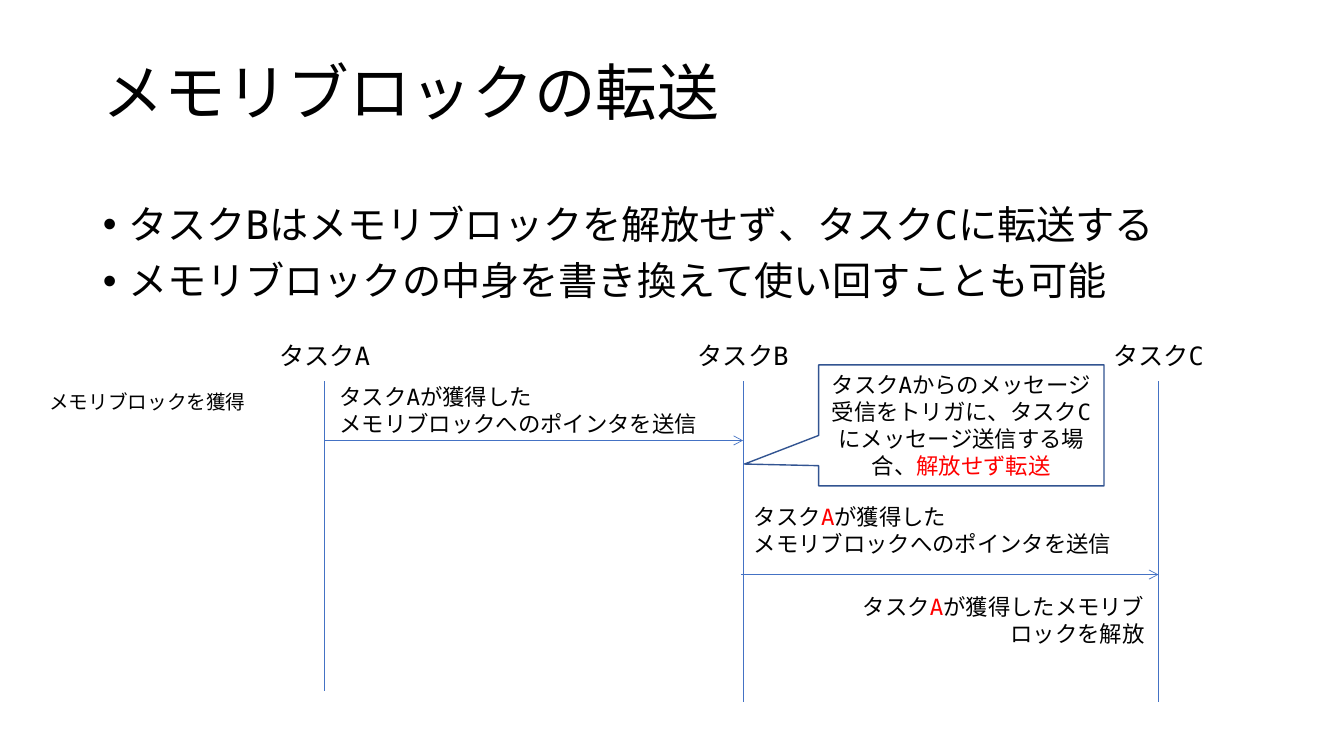
from dataclasses import dataclass

from lxml.etree import SubElement
from pptx import Presentation
from pptx.dml.color import RGBColor as RGB
from pptx.enum.shapes import MSO_CONNECTOR as CONN, MSO_SHAPE as SHAPE
from pptx.enum.text import MSO_ANCHOR as ANCHOR, PP_ALIGN as AL
from pptx.oxml.ns import qn
from pptx.util import Inches, Pt

FONT = "DejaVu Sans Mono"
COLORS = {"text": "000000", "accent": "FF0000", "line": "4472C4", "callout": "325491"}
Run = tuple[str, str]
Box = tuple[float, float, float, float]
LIFELINE_TOP = 3.78


@dataclass
class Task:
    name: str
    x: float
    bottom: float


@dataclass
class Message:
    start: float
    end: float
    y: float


@dataclass
class Label:
    box: Box
    paragraphs: list[list[Run]]
    size: int = 16
    align: AL = AL.LEFT


TITLE = "メモリブロックの転送"
BULLETS = [
    "タスクBはメモリブロックを解放せず、タスクCに転送する",
    "メモリブロックの中身を書き換えて使い回すことも可能",
]
TASKS = [Task("タスクA", 3.22, 6.86), Task("タスクB", 7.37, 6.96), Task("タスクC", 11.49, 6.96)]
MESSAGES = [Message(3.22, 7.37, 4.37), Message(7.35, 11.49, 5.7)]
POINTER = "メモリブロックへのポインタを送信"
LABELS = [
    Label((3.27, 3.75, 3.92, 0.64), [[("タスクAが獲得した", "text")], [(POINTER, "text")]]),
    Label((0.39, 3.82, 2.8, 0.34), [[("メモリブロックを獲得", "text")]], 14),
    Label((7.38, 4.94, 3.83, 0.64),
          [[("タスク", "text"), ("A", "accent"), ("が獲得した", "text")], [(POINTER, "text")]]),
    Label((8.13, 5.84, 3.32, 0.64),
          [[("タスク", "text"), ("A", "accent"), ("が獲得したメモリブロックを解放", "text")]],
          align=AL.RIGHT),
]
CALLOUT = Label(
    (8.12, 3.62, 2.83, 1.2),
    [[("タスクAからのメッセージ受信をトリガに、タスクCにメッセージ送信する場合、", "text"),
      ("解放せず転送", "accent")]],
    align=AL.CENTER,
)


def color(name: str) -> RGB:
    return RGB.from_string(COLORS[name])


def write(tf, paragraphs: list[list[Run]], size: int, align: AL) -> None:
    tf.word_wrap = True
    for i, runs in enumerate(paragraphs):
        p = tf.paragraphs[0] if i == 0 else tf.add_paragraph()
        p.alignment = align
        for text, shade in runs:
            r = p.add_run()
            r.text = text
            r.font.size = Pt(size)
            r.font.color.rgb = color(shade)
            r.font.name = FONT
            SubElement(r.font._element, qn("a:ea")).set("typeface", FONT)


def place(sp, box: Box) -> None:
    sp.left, sp.top, sp.width, sp.height = map(Inches, box)


def add_label(s, label: Label) -> None:
    sp = s.shapes.add_textbox(*map(Inches, label.box))
    write(sp.text_frame, label.paragraphs, label.size, label.align)


def add_line(s, x1: float, y1: float, x2: float, y2: float, arrow: bool = False) -> None:
    sp = s.shapes.add_connector(CONN.STRAIGHT, *map(Inches, (x1, y1, x2, y2)))
    sp.line.color.rgb = color("line")
    sp.line.width = Pt(0.5)
    if arrow:
        SubElement(sp.line._get_or_add_ln(), qn("a:tailEnd")).set("type", "arrow")
    SubElement(sp._element.spPr, qn("a:effectLst"))


def add_task(s, task: Task) -> None:
    add_line(s, task.x, LIFELINE_TOP, task.x, task.bottom)
    add_label(s, Label((task.x - 1.2, 3.33, 2.4, 0.4), [[(task.name, "text")]], 18, AL.CENTER))


def add_callout(s, label: Label) -> None:
    sp = s.shapes.add_shape(SHAPE.RECTANGULAR_CALLOUT, *map(Inches, label.box))
    sp.adjustments[0], sp.adjustments[1] = -0.76, 0.32
    sp.shadow.inherit = False
    sp.fill.background()
    sp.line.color.rgb = color("callout")
    sp.line.width = Pt(1)
    sp.text_frame.vertical_anchor = ANCHOR.MIDDLE
    write(sp.text_frame, label.paragraphs, label.size, label.align)


def fill_placeholders(s) -> None:
    title, body = s.shapes.title, s.placeholders[1]
    place(title, (0.92, 0.4, 11.5, 1.09))
    title.text_frame.vertical_anchor = ANCHOR.MIDDLE
    write(title.text_frame, [[(TITLE, "text")]], 44, AL.LEFT)
    title.text_frame.paragraphs[0].line_spacing = 0.9
    place(body, (0.92, 1.99, 11.5, 4.76))
    write(body.text_frame, [[(text, "text")] for text in BULLETS], 28, AL.LEFT)
    for p in body.text_frame.paragraphs:
        p.line_spacing = 0.9
        p.space_before = Pt(10)
        pPr = p._p.get_or_add_pPr()
        pPr.set("marL", str(Inches(0.25)))
        pPr.set("indent", str(-Inches(0.25)))
        SubElement(pPr, qn("a:buChar")).set("char", "•")


def main() -> None:
    """Build the memory block transfer slide."""
    prs = Presentation()
    prs.slide_width, prs.slide_height = Inches(13.33), Inches(7.5)
    s = prs.slides.add_slide(prs.slide_layouts[1])
    fill_placeholders(s)
    for task in TASKS:
        add_task(s, task)
    for m in MESSAGES:
        add_line(s, m.start, m.y, m.end, m.y, arrow=True)
    for label in LABELS:
        add_label(s, label)
    add_callout(s, CALLOUT)
    prs.save("out.pptx")


if __name__ == "__main__":
    main()
